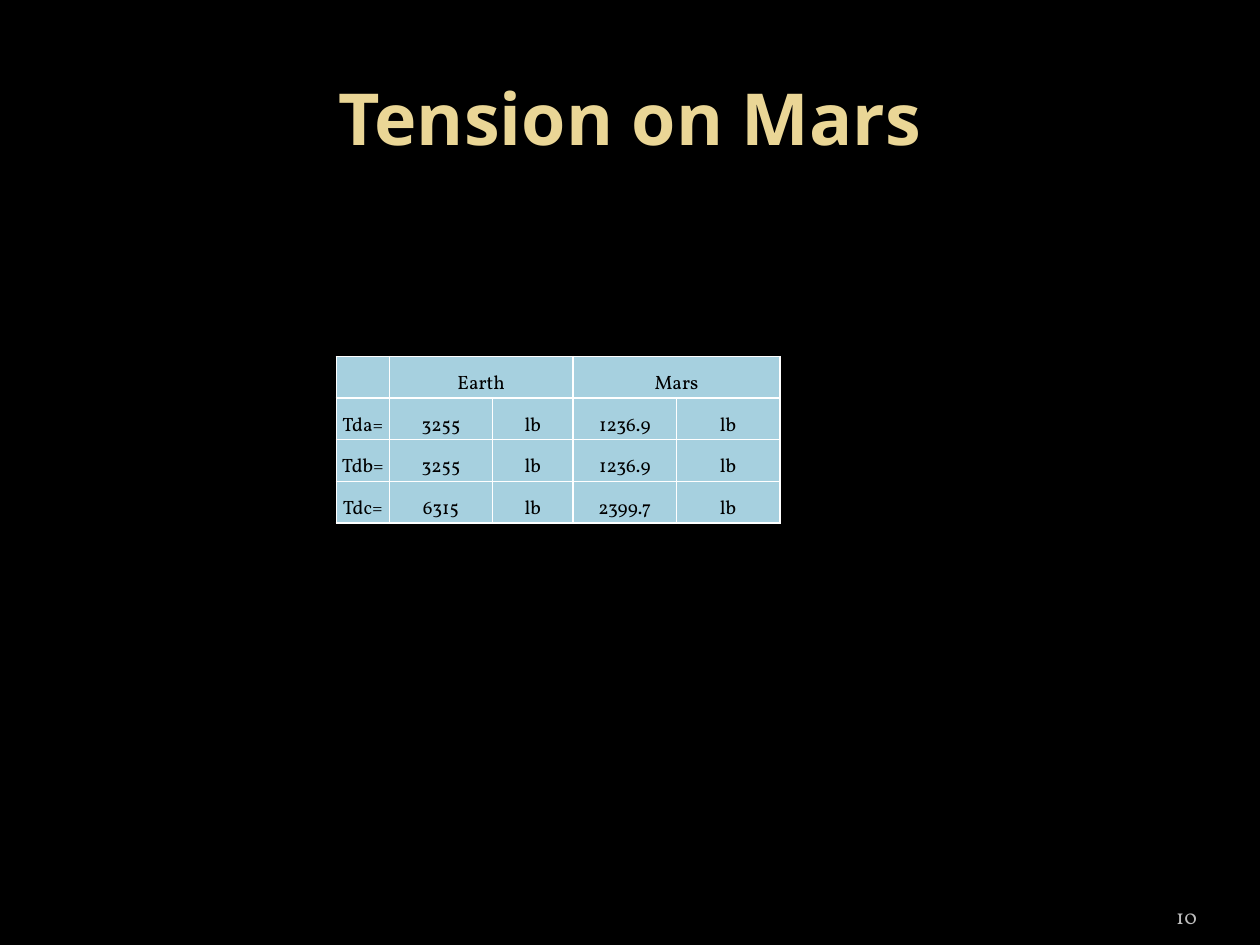
from lxml.etree import SubElement
from pptx import Presentation
from pptx.dml.color import RGBColor
from pptx.enum.text import MSO_ANCHOR as ANCHOR, PP_ALIGN as ALIGN
from pptx.oxml.ns import qn
from pptx.util import Inches, Pt

COL_WIDTHS = [0.42, 0.82, 0.64, 0.82, 0.82]
ROW_HEIGHT = 0.33
ROWS = [
    ["", "Earth", "", "Mars", ""],
    ["Tda=", "3255", "lb", "1236.9", "lb"],
    ["Tdb=", "3255", "lb", "1236.9", "lb"],
    ["Tdc=", "6315", "lb", "2399.7", "lb"],
]


def rgb(color):
    return RGBColor.from_string(color)


def write(tf, text, font, size, color, align, bold=False):
    tf.text = text
    p = tf.paragraphs[0]
    p.alignment = align
    for r in p.runs:
        r.font.name, r.font.size, r.font.bold = font, Pt(size), bold
        r.font.color.rgb = rgb(color)
    if not text:  # keeps an empty cell from stretching its row
        SubElement(p._p, qn("a:endParaRPr"), sz=str(size * 100))


def set_borders(cell, color, width):
    tcPr = cell._tc.get_or_add_tcPr()
    for side in ("lnL", "lnR", "lnT", "lnB"):
        ln = SubElement(tcPr, qn(f"a:{side}"), w=str(Pt(width)))
        fill = SubElement(ln, qn("a:solidFill"))
        SubElement(fill, qn("a:srgbClr"), val=color)


def add_title(slide, left, top, width, height):
    sp = slide.shapes.title
    sp.left, sp.top = Inches(left), Inches(top)
    sp.width, sp.height = Inches(width), Inches(height)
    sp.text_frame.vertical_anchor = ANCHOR.MIDDLE
    write(sp.text_frame, "Tension on Mars", "Noto Sans", 41, "EAD696",
          ALIGN.CENTER, bold=True)


def add_tension_table(slide, left, top):
    table = slide.shapes.add_table(
        len(ROWS), len(COL_WIDTHS), Inches(left), Inches(top),
        Inches(sum(COL_WIDTHS)), Inches(ROW_HEIGHT * len(ROWS))).table
    for col, width in zip(table.columns, COL_WIDTHS):
        col.width = Inches(width)
    for i, values in enumerate(ROWS):
        table.rows[i].height = Inches(ROW_HEIGHT)
        for j, value in enumerate(values):
            cell = table.cell(i, j)
            cell.margin_left = cell.margin_right = cell.margin_top = Inches(0.01)
            cell.margin_bottom = 0
            cell.vertical_anchor = ANCHOR.BOTTOM
            write(cell.text_frame, value, "Vollkorn", 11, "000000", ALIGN.CENTER)
            set_borders(cell, "FFFFFF", 1)
            cell.fill.solid()
            cell.fill.fore_color.rgb = rgb("A6D0DF")
    # Each planet heads a value column and a unit column
    for j in (1, 3):
        table.cell(0, j).merge(table.cell(0, j + 1))


def add_page_number(slide, left, top, width, height):
    tf = slide.shapes.add_textbox(
        Inches(left), Inches(top), Inches(width), Inches(height)).text_frame
    tf.word_wrap = True
    tf.margin_left = tf.margin_right = 0
    tf.vertical_anchor = ANCHOR.BOTTOM
    write(tf, "10", "Vollkorn", 12, "BDBDBD", ALIGN.RIGHT)


def main():
    prs = Presentation()
    prs.slide_width, prs.slide_height = Inches(10), Inches(7.5)
    slide = prs.slides.add_slide(prs.slide_layouts[5])  # title only
    slide.background.fill.solid()
    slide.background.fill.fore_color.rgb = rgb("000000")
    add_title(slide, 0.5, 0.3, 9, 1.25)
    add_tension_table(slide, 2.67, 2.83)
    add_page_number(slide, 8.67, 7.02, 0.83, 0.4)
    prs.save("out.pptx")


if __name__ == "__main__":
    main()
